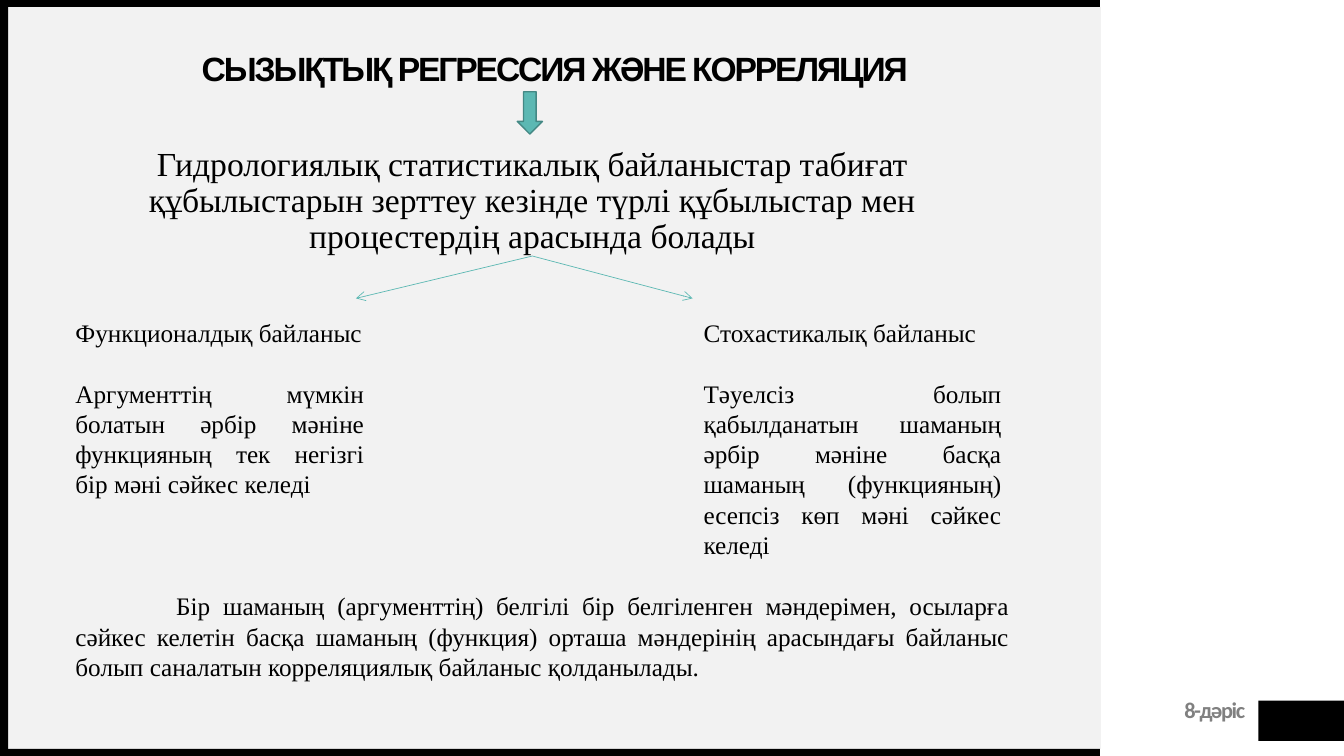
from lxml.etree import SubElement
from pptx import Presentation
from pptx.dml.color import RGBColor
from pptx.enum.shapes import MSO_CONNECTOR as CONN, MSO_SHAPE as SHAPE
from pptx.enum.text import MSO_ANCHOR as ANCHOR, MSO_AUTO_SIZE as AUTO, PP_ALIGN as ALIGN
from pptx.oxml.ns import qn
from pptx.util import Inches, Pt

BLACK, PANEL, GREY = "000000", "F2F2F2", "808080"
TEAL, DARK_TEAL = "5CB8B3", "448884"
SERIF = "Times New Roman"


def rgb(value):
    return RGBColor.from_string(value)


def place(sp, box):
    sp.left, sp.top, sp.width, sp.height = map(Inches, box)


def add_block(s, box, fill, line=None, kind=SHAPE.RECTANGLE):
    sp = s.shapes.add_shape(kind, *map(Inches, box))
    sp.shadow.inherit = False
    sp.fill.solid()
    sp.fill.fore_color.rgb = rgb(fill)
    if line:
        sp.line.color.rgb = rgb(line)
        sp.line.width = Pt(1)
    else:
        sp.line.fill.background()


def add_arrow(s, start, end):
    c = s.shapes.add_connector(CONN.STRAIGHT, *map(Inches, start + end))
    c.line.color.rgb = rgb(TEAL)
    c.line.width = Pt(0.5)
    SubElement(c.line._get_or_add_ln(), qn("a:tailEnd"), type="arrow")
    SubElement(c._element.spPr, qn("a:effectLst"))


def set_text(sp, *paragraphs, size=18, font=SERIF, color=BLACK, bold=False, align=ALIGN.JUSTIFY,
             anchor=ANCHOR.TOP, margins=(0.1, 0.05, 0.1, 0.05), line_spacing=None, gap=0,
             tracking=0, indent=0):
    tf = sp.text_frame
    tf.word_wrap = True
    tf.auto_size = AUTO.NONE
    tf.vertical_anchor = anchor
    tf.margin_left, tf.margin_top, tf.margin_right, tf.margin_bottom = map(Inches, margins)
    for i, text in enumerate(paragraphs):
        p = tf.add_paragraph() if i else tf.paragraphs[0]
        pPr = p._p.get_or_add_pPr()
        pPr.set("marL", "0")
        pPr.set("indent", str(Inches(indent)))
        SubElement(pPr, qn("a:buNone"))
        p.alignment = align
        p.space_before = Pt(gap if i else 0)
        if line_spacing:
            p.line_spacing = line_spacing
        r = p.add_run()
        r.text = text
        r.font.size, r.font.name, r.font.bold = Pt(size), font, bold
        r.font.color.rgb = rgb(color)
        if tracking:
            r._r.get_or_add_rPr().set("spc", str(int(tracking * 100)))


def add_text(s, box, *paragraphs, **fmt):
    set_text(s.shapes.add_textbox(*map(Inches, box)), *paragraphs, **fmt)


def fill_placeholder(s, sp, box, text, **fmt):
    """Move a placeholder in front of the background blocks and fill it."""
    s.shapes._spTree.append(sp._element)
    place(sp, box)
    set_text(sp, text, size=24, align=ALIGN.CENTER, margins=(0, 0, 0, 0), line_spacing=0.9, **fmt)


def add_frame(s):
    add_block(s, (0.08, 0.07, 10.84, 7.36), PANEL)
    add_block(s, (12.48, 6.95, 0.86, 0.4), BLACK)
    for top in (0, 7.43):
        add_block(s, (0, top, 10.91, 0.07), BLACK)
    add_block(s, (0, 0.03, 0.08, 7.47), BLACK)
    add_text(s, (10.53, 6.94, 1.82, 0.25), "8-дәріс", size=16, font="Calibri", color=GREY,
             bold=True, align=ALIGN.RIGHT, margins=(0, 0.04, 0, 0), line_spacing=Pt(14),
             tracking=-1)


def main():
    prs = Presentation()
    prs.slide_width, prs.slide_height = Inches(13.33), Inches(7.5)
    s = prs.slides.add_slide(prs.slide_layouts[1])
    title, body = s.placeholders

    add_frame(s)
    fill_placeholder(s, title, (0.47, 0.47, 10.06, 0.47), "СЫЗЫҚТЫҚ РЕГРЕССИЯ ЖӘНЕ КОРРЕЛЯЦИЯ",
                     font="Arial", bold=True, anchor=ANCHOR.MIDDLE, tracking=-1.5)
    fill_placeholder(s, body, (0.53, 1.46, 9.5, 1.08),
                     "Гидрологиялық статистикалық байланыстар табиғат құбылыстарын зерттеу "
                     "кезінде түрлі құбылыстар мен процестердің арасында болады")
    add_block(s, (5.13, 0.91, 0.25, 0.42), TEAL, DARK_TEAL, SHAPE.DOWN_ARROW)
    for x in (3.53, 6.87):
        add_arrow(s, (5.28, 2.54), (x, 2.96))

    add_text(s, (0.65, 3.1, 3.06, 1.92), "Функционалдық байланыс",
             "Аргументтің мүмкін болатын әрбір мәніне функцияның тек негізгі бір мәні "
             "сәйкес келеді", gap=21.6)
    add_text(s, (6.88, 3.1, 3.15, 2.52), "Стохастикалық байланыс",
             "Тәуелсіз болып қабылданатын шаманың әрбір мәніне басқа шаманың (функцияның) "
             "есепсіз көп мәні сәйкес келеді", gap=21.6)
    add_text(s, (0.65, 5.81, 9.46, 1.31),
             "Бір шаманың (аргументтің) белгілі бір белгіленген мәндерімен, осыларға сәйкес "
             "келетін басқа шаманың (функция) орташа мәндерінің арасындағы байланыс болып "
             "саналатын корреляциялық байланыс қолданылады.", indent=1)
    prs.save("out.pptx")


if __name__ == "__main__":
    main()
